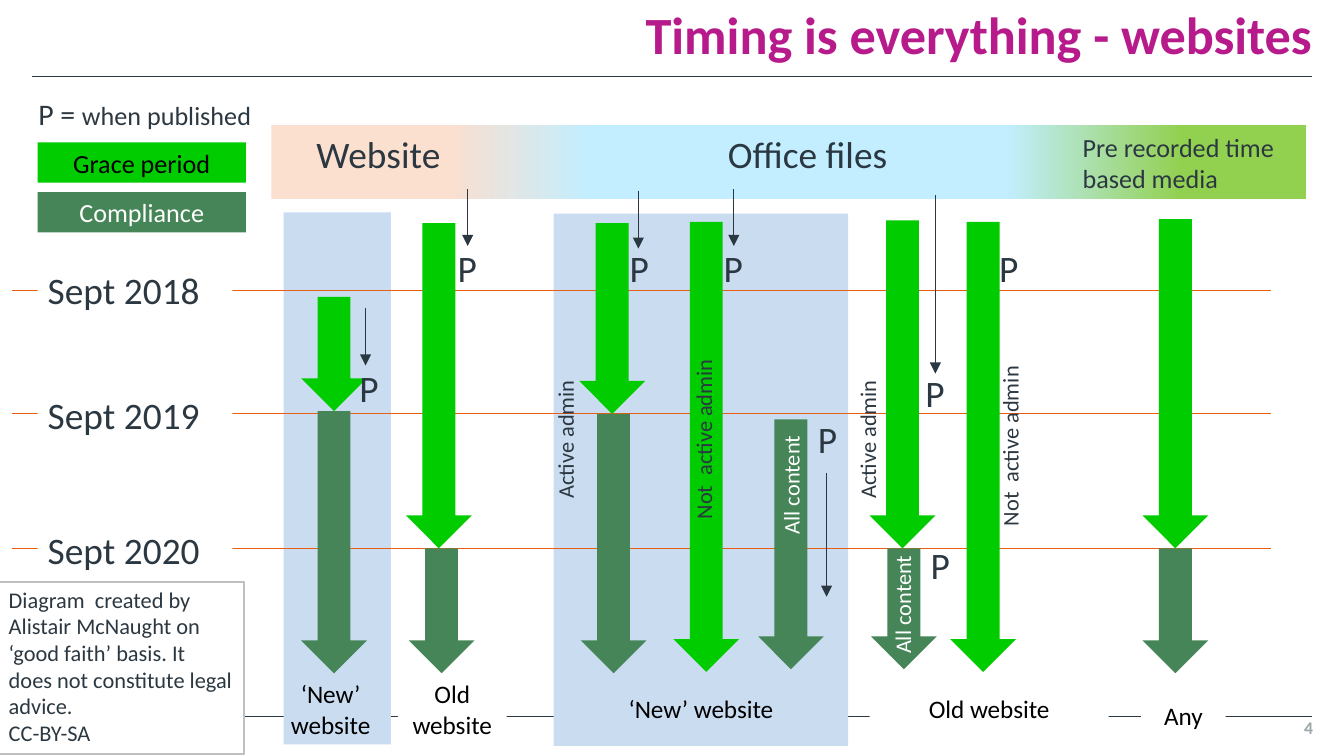
from copy import deepcopy

from lxml import etree
from pptx import Presentation
from pptx.dml.color import RGBColor
from pptx.enum.shapes import MSO_CONNECTOR, MSO_SHAPE
from pptx.enum.text import MSO_ANCHOR, MSO_AUTO_SIZE, PP_ALIGN
from pptx.oxml.ns import qn
from pptx.util import Inches, Pt

RECTANGLE, DOWN_ARROW = MSO_SHAPE.RECTANGLE, MSO_SHAPE.DOWN_ARROW
STRAIGHT = MSO_CONNECTOR.STRAIGHT
TOP, MIDDLE, BOTTOM = MSO_ANCHOR.TOP, MSO_ANCHOR.MIDDLE, MSO_ANCHOR.BOTTOM
LEFT, CENTER, RIGHT = PP_ALIGN.LEFT, PP_ALIGN.CENTER, PP_ALIGN.RIGHT
FIXED, GROW = MSO_AUTO_SIZE.NONE, MSO_AUTO_SIZE.SHAPE_TO_FIT_TEXT

COLUMNS, ROWS = 100, 56.25
CELL = Inches(0.1)
INK, WHITE, BLACK = "2C3841", "FFFFFF", "000000"
GRACE, COMPLIANCE, PANEL, ORANGE = "00CC00", "458557", "CADCF0", "E85E12"
SEPT_2018, SEPT_2019, SEPT_2020, END = 21.6, 30.8, 40.8, 50.1
ARROW_WIDTH = 4.9
INSETS, NO_INSETS = (0.75, 0.38), (0, 0)


def color(value):
    return RGBColor.from_string(value)


def cells(*values):
    return [round(value * CELL) for value in values]


def write(shape, paragraphs, size, ink=INK, align=LEFT, anchor=MIDDLE,
          insets=INSETS, spacing=0.99, fit=GROW, bold=False):
    frame = shape.text_frame
    across, down = cells(*insets)
    frame_format = {
        "word_wrap": True, "auto_size": fit, "vertical_anchor": anchor,
        "margin_left": across, "margin_right": across,
        "margin_top": down, "margin_bottom": down,
    }
    for name, value in frame_format.items():
        setattr(frame, name, value)
    for index, runs in enumerate(paragraphs):
        paragraph = frame.add_paragraph() if index else frame.paragraphs[0]
        paragraph.alignment = align
        paragraph.line_spacing = spacing
        for text, run_size in runs:
            run = paragraph.add_run()
            run.text = text
            font_format = {"name": "Calibri", "size": Pt(run_size or size), "bold": bold}
            for name, value in font_format.items():
                setattr(run.font, name, value)
            run.font.color.rgb = color(ink)


def add_label(slide, box, text, size=20, turn=0, **text_format):
    shape = slide.shapes.add_textbox(*cells(*box))
    shape.rotation = turn
    write(shape, [[(text, None)]], size, **text_format)


def add_block(slide, box, fill, kind=RECTANGLE, outline=None):
    shape = slide.shapes.add_shape(kind, *cells(*box))
    shape.shadow.inherit = False
    shape.fill.solid()
    shape.fill.fore_color.rgb = color(fill)
    if outline:
        shape.line.color.rgb = color(outline)
        shape.line.width = Pt(0.75)
    else:
        shape.line.fill.background()
    return shape


def add_period(slide, left, top, bottom, fill):
    add_block(slide, (left, top, ARROW_WIDTH, bottom - top), fill, DOWN_ARROW)


def add_line(slide, start, end, ink=INK, arrow=False):
    line = slide.shapes.add_connector(STRAIGHT, *cells(*start, *end))
    line.line.color.rgb = color(ink)
    line.line.width = Pt(0.5)
    properties = line._element.spPr
    if arrow:
        etree.SubElement(properties.find(qn("a:ln")), qn("a:tailEnd"), type="triangle")
    etree.SubElement(properties, qn("a:effectLst"))


def add_content_band(slide):
    band = add_block(slide, (20.2, 9.3, 77, 5.5), WHITE)
    band.fill.gradient()
    band.fill.gradient_angle = 0
    stop_list = band._element.spPr.find(qn("a:gradFill")).find(qn("a:gsLst"))
    for stop in list(stop_list):
        stop_list.append(deepcopy(stop))
    stops = [(0.17, "FBDFCF"), (0.31, "C2EEFF"), (0.71, "C2EEFF"), (0.88, "92D050")]
    for stop, (position, value) in zip(band.fill.gradient_stops, stops):
        stop.position = position
        stop.color.rgb = color(value)


def add_title(slide):
    title = slide.shapes.title
    title.left, title.top, title.width, title.height = cells(30.3, 0, 67.3, 4.9)
    write(title, [[("Timing is everything - websites", None)]], 28, "B71A8B", RIGHT,
          BOTTOM, NO_INSETS, 0.9, FIXED, True)


def add_background(slide):
    for row in (5.7, 53.3):
        add_line(slide, (2.4, row), (97.6, row))
    add_block(slide, (21.1, 15.8, 8, 39.6), PANEL)
    add_content_band(slide)
    add_block(slide, (41.2, 15.9, 21.9, 39.6), PANEL)
    for row in (SEPT_2018, SEPT_2019, SEPT_2020):
        add_line(slide, (0.9, row), (94.6, row), ORANGE)


def add_headings(slide):
    add_label(slide, (22.8, 9.5, 12.7, 4.1), "Website")
    add_label(slide, (47.4, 9.5, 25.4, 4.1), "Office files", align=CENTER)
    add_label(slide, (79.8, 9.5, 17.6, 5.5), "Pre recorded time based media", 14, anchor=TOP)
    for year, top in ((2018, 19.6), (2019, 28.9), (2020, 39)):
        date = add_block(slide, (2.8, top, 14.5, 4.1), WHITE)
        write(date, [[(f"Sept {year}", None)]], 20)


def add_key(slide):
    key = slide.shapes.add_textbox(*cells(2.1, 6.8, 18.7, 3.5))
    write(key, [[("P = ", 16), ("when published", 14)]], 14)
    for row, (text, fill, ink) in enumerate((("Grace period", GRACE, BLACK),
                                             ("Compliance", COMPLIANCE, WHITE))):
        swatch = add_block(slide, (2.8, 10.6 + 3.7 * row, 15.5, 3), fill)
        write(swatch, [[(text, None)]], 14, ink, CENTER, insets=(1, 0.5),
              spacing=1, fit=FIXED)


def add_periods(slide):
    for left, top, bottom in ((30.4, SEPT_2020, END), (22.4, 30.6, END),
                              (43.2, SEPT_2019, END), (85, SEPT_2020, END),
                              (56.4, 31.2, 49.8), (64.8, SEPT_2020, 49.8)):
        add_period(slide, left, top, bottom, COMPLIANCE)
    for left, top, bottom in ((30.2, 16.6, SEPT_2020), (85, 16.3, SEPT_2020),
                              (22.4, 22.1, 30.6), (50.1, 16.5, 50),
                              (43.1, 16.6, SEPT_2019), (70.7, 16.5, 50),
                              (64.7, 16.4, SEPT_2020)):
        add_period(slide, left, top, bottom, GRACE)


def add_publication_marks(slide):
    for left, top in ((33.3, 18), (53.1, 18), (46.1, 18), (73.6, 18), (68.1, 27.3),
                      (68.5, 40.1), (26, 26.9), (60.1, 30.7)):
        add_label(slide, (left, top, 3.7, 4.1), "P")
    for column, top, bottom in ((27.2, 22.9, 27.2), (34.8, 14.1, 18.3),
                                (54.6, 14.1, 18.3), (47.5, 14.2, 18.5),
                                (61.5, 35.2, 44.4), (69.6, 14.5, 27.8)):
        add_line(slide, (column, top), (column, bottom), arrow=True)


def add_lane_labels(slide):
    for text, ink, left, top in (("Active admin", INK, 34.5, 31.3),
                                 ("Active admin", INK, 57, 31.3),
                                 ("Not  active admin", INK, 67.6, 31.8),
                                 ("Not  active admin", INK, 44.8, 31.3),
                                 ("All content", WHITE, 51.3, 34.7),
                                 ("All content", WHITE, 59.6, 43.6)):
        add_label(slide, (left, top, 15.2, 2.8), text, 12, 270, ink=ink, align=CENTER)


def add_footer(slide):
    for text, left, top, width, fill in (("‘New’ website", 20.2, 50.1, 8.8, None),
                                         ("Old website", 29.6, 50.1, 8.1, WHITE),
                                         ("‘New’ website", 40.7, 50.1, 22.9, None),
                                         ("Old website", 64.7, 50.1, 17.8, WHITE),
                                         ("Any", 84.9, 50.6, 6.3, WHITE)):
        box = (left, top, width, 5.3)
        shape = add_block(slide, box, fill) if fill else slide.shapes.add_textbox(*cells(*box))
        write(shape, [[(text, None)]], 13.5, BLACK, CENTER, insets=(1, 0.5),
              spacing=1, fit=FIXED)
    note = add_block(slide, (-0.1, 43.3, 18.25, 12.8), WHITE, outline="BFBFBF")
    credit = ("Diagram  created by Alistair McNaught on ‘good faith’ basis. "
              "It does not constitute legal advice.")
    write(note, [[(credit, None)], [("CC-BY-SA", None)]], 12, anchor=TOP)
    add_label(slide, (89.8, 53.3, 7.9, 1.8), "4", 9.5, ink="9BA7A8", align=RIGHT,
              anchor=TOP, insets=NO_INSETS, spacing=1, fit=FIXED, bold=True)


def main():
    presentation = Presentation()
    presentation.slide_width, presentation.slide_height = cells(COLUMNS, ROWS)
    slide = presentation.slides.add_slide(presentation.slide_layouts[5])
    for add_part in (add_background, add_title, add_headings, add_key, add_periods,
                     add_publication_marks, add_lane_labels, add_footer):
        add_part(slide)
    presentation.save("out.pptx")


if __name__ == "__main__":
    main()
